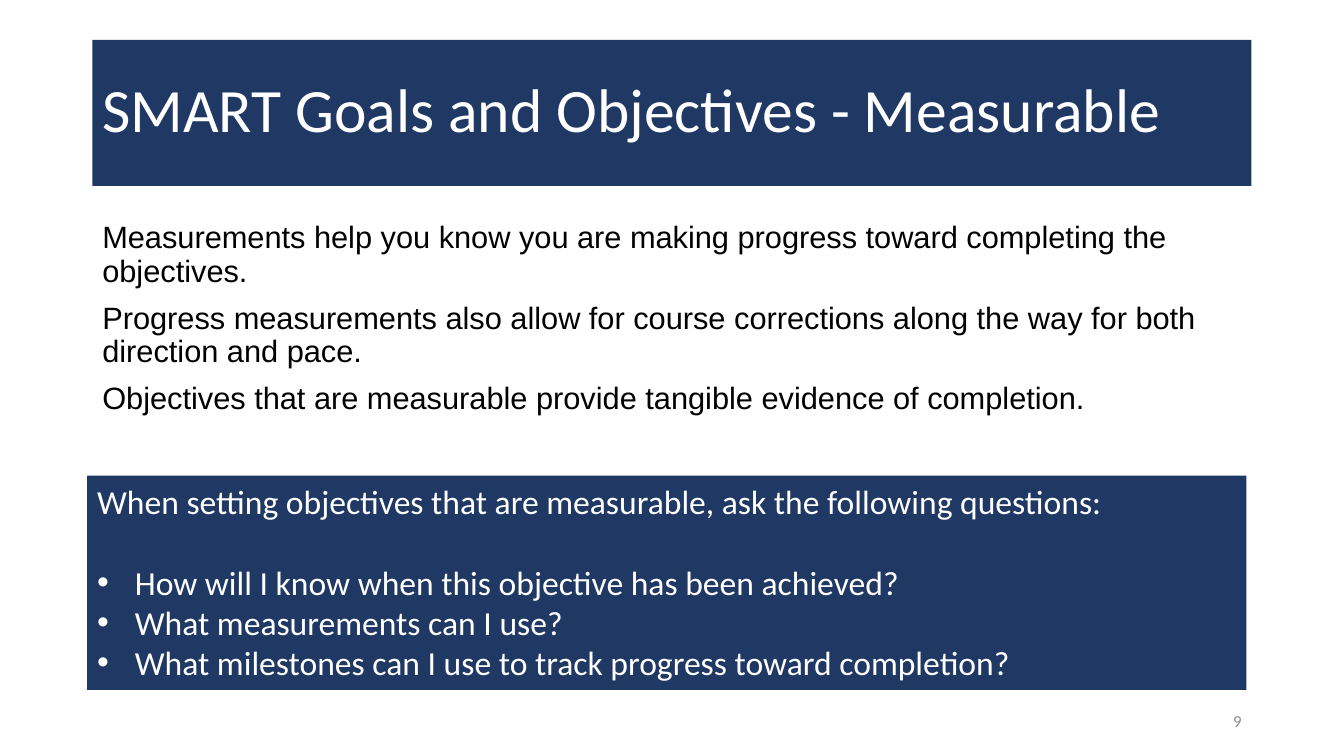
from lxml.etree import SubElement
from pptx import Presentation
from pptx.dml.color import RGBColor
from pptx.enum.shapes import MSO_SHAPE
from pptx.enum.text import MSO_ANCHOR, PP_ALIGN
from pptx.oxml.ns import qn
from pptx.util import Emu, Pt

EMU_PER_PX = 9525
COLOURS = {"navy": "203864", "white": "FFFFFF", "black": "000000", "grey": "8C8C8C"}


def px(length):
    return Emu(length * EMU_PER_PX)


class SlideBuilder:
    heading_font = "Calibri"
    body_font = "Arial"
    bullet_indent = 36

    def __init__(self, width, height):
        self.deck = Presentation()
        self.deck.slide_width, self.deck.slide_height = px(width), px(height)
        self.slide = self.deck.slides.add_slide(self.deck.slide_layouts[6])

    def panel(self, left, top, width, height, lines, **style):
        panel = self.slide.shapes.add_shape(
            MSO_SHAPE.RECTANGLE, px(left), px(top), px(width), px(height))
        panel.shadow.inherit = False
        panel.fill.solid()
        panel.fill.fore_color.rgb = RGBColor.from_string(COLOURS["navy"])
        panel.line.fill.background()
        return self.set_lines(panel.text_frame, lines, colour="white", **style)

    def text(self, left, top, width, height, lines, **style):
        box = self.slide.shapes.add_textbox(px(left), px(top), px(width), px(height))
        return self.set_lines(box.text_frame, lines, **style)

    def set_lines(self, frame, lines, size, colour, font=heading_font,
                  align=PP_ALIGN.LEFT, anchor=MSO_ANCHOR.TOP, spacing=1.0, before=0):
        """Fill the frame with one paragraph per line and return the paragraphs."""
        frame.word_wrap = True
        frame.vertical_anchor = anchor
        frame.text = "\n".join(lines)
        for paragraph in frame.paragraphs:
            paragraph.alignment = align
            paragraph.line_spacing = spacing
            paragraph.space_before = Pt(before)
            for run in paragraph.runs:
                run.font.name = font
                run.font.size = Pt(size)
                run.font.color.rgb = RGBColor.from_string(COLOURS[colour])
        return frame.paragraphs

    def bullet(self, paragraph):
        properties = paragraph._p.get_or_add_pPr()
        properties.set("marL", str(px(self.bullet_indent)))
        properties.set("indent", str(px(-self.bullet_indent)))
        SubElement(properties, qn("a:buFont"), typeface=self.body_font)
        SubElement(properties, qn("a:buChar"), char="•")


def main():
    builder = SlideBuilder(1280, 720)
    builder.text(904, 667, 288, 38, ["9"], size=12, colour="grey",
                 align=PP_ALIGN.RIGHT, anchor=MSO_ANCHOR.MIDDLE)

    intro, *questions = builder.panel(83, 453, 1104, 204, [
        "When setting objectives that are measurable, ask the following questions:",
        "How will I know when this objective has been achieved?",
        "What measurements can I use?",
        "What milestones can I use to track progress toward completion?",
    ], size=24)
    intro.space_after = Pt(29)
    for question in questions:
        builder.bullet(question)

    builder.text(88, 207, 1093, 216, [
        "Measurements help you know you are making progress toward completing the objectives.",
        "Progress measurements also allow for course corrections along the way "
        "for both direction and pace.",
        "Objectives that are measurable provide tangible evidence of completion.",
    ], size=22, colour="black", font=builder.body_font, spacing=0.9, before=10)

    builder.panel(88, 38, 1104, 139, ["SMART Goals and Objectives - Measurable"],
                  size=44, anchor=MSO_ANCHOR.MIDDLE, spacing=0.9)
    builder.deck.save("out.pptx")


if __name__ == "__main__":
    main()
